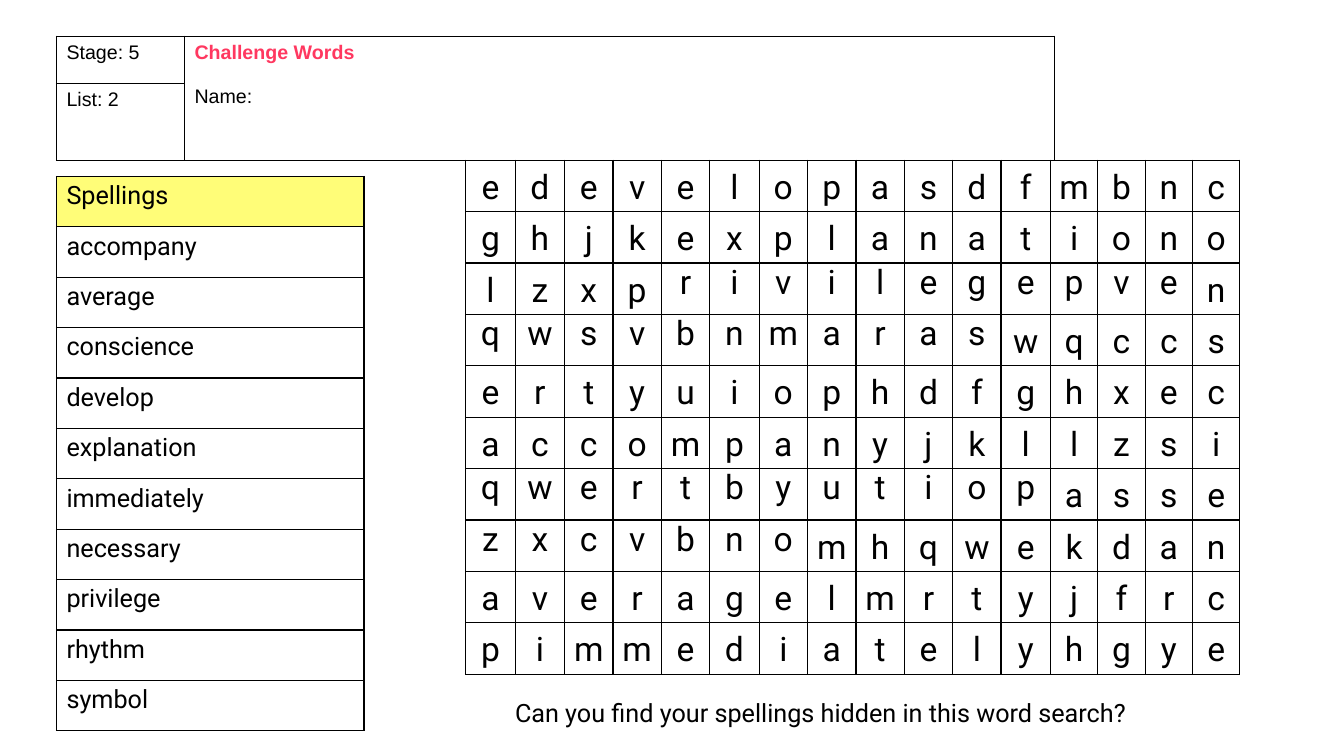
import pptx
import pptx.dml.color
import pptx.enum.text
import pptx.oxml
import pptx.oxml.ns
import pptx.util

Inches = pptx.util.Inches
Pt = pptx.util.Pt
COLORS = {"text": "000000", "border": "000000", "heading": "FF3860", "yellow": "FFFD78"}
WORDS = ["accompany", "average", "conscience", "develop", "explanation",
         "immediately", "necessary", "privilege", "rhythm", "symbol"]
LETTERS = ["edevelopasdfmbnc", "ghjkexplanationo", "lzxprivilegepven", "qwsvbnmaraswqccs",
           "ertyuiophdfghxec", "accompanyjkllzsi", "qwertbyutiopasse", "zxcvbnomhqwekdan",
           "averagelmrtyjfrc", "pimmediatelyhgye"]
GRID_COLS = [0.49] * 2 + [0.48] * 3 + [0.49] + [0.48] * 5 + [0.49] + [0.47] * 4
SINGLE_SPACED = {2: range(4, 15), 3: range(11), 6: range(12), 7: range(7)}


def rgb(name):
    return pptx.dml.color.RGBColor.from_string(COLORS[name])


def style(p, size, font, color="text", bold=False):
    p.font.size = Pt(size)
    p.font.name = font
    p.font.bold = bold
    p.font.color.rgb = rgb(color)


def add_border(cell):
    tcPr = cell._tc.get_or_add_tcPr()
    for side in ("lnL", "lnR", "lnT", "lnB"):
        tcPr.append(pptx.oxml.parse_xml(
            f'<a:{side} {pptx.oxml.ns.nsdecls("a")} w="{Pt(1)}"><a:solidFill>'
            f'<a:srgbClr val="{COLORS["border"]}"/></a:solidFill></a:{side}>'))


def add_grid(s, left, top, cols, rows):
    frame = s.shapes.add_table(len(rows), len(cols), Inches(left), Inches(top),
                               Inches(sum(cols)), Inches(sum(rows)))
    tbl = frame.table
    tbl.first_row = False
    tbl.horz_banding = False
    for column, width in zip(tbl.columns, cols):
        column.width = Inches(width)
    for row, height in zip(tbl.rows, rows):
        row.height = Inches(height)
    for cell in tbl.iter_cells():
        add_border(cell)
        cell.fill.background()
    return tbl


def add_header(s, left, top, width):
    label_width = 1.27
    tbl = add_grid(s, left, top, [label_width, width - label_width], [0.47, 0.76])
    tbl.cell(0, 1).merge(tbl.cell(1, 1))
    for row, label in enumerate(["Stage: 5", "List: 2"]):
        cell = tbl.cell(row, 0)
        cell.text = label
        style(cell.text_frame.paragraphs[0], 14, "Arial")
    tf = tbl.cell(0, 1).text_frame
    tf.text = "Challenge Words"
    style(tf.paragraphs[0], 14, "Arial", "heading", True)
    p = tf.add_paragraph()
    p.text = "Name:"
    p.space_before = Pt(16)
    style(p, 14, "Arial")


def add_spellings(s, left, top, width, height):
    entries = ["Spellings"] + WORDS
    tbl = add_grid(s, left, top, [width], [height / len(entries)] * len(entries))
    for cell, entry in zip(tbl.iter_cells(), entries):
        cell.text = entry
        style(cell.text_frame.paragraphs[0], 18, "Roboto")
    heading = tbl.cell(0, 0)
    heading.fill.solid()
    heading.fill.fore_color.rgb = rgb("yellow")


def add_word_search(s, left, top, height):
    tbl = add_grid(s, left, top, GRID_COLS, [height / len(LETTERS)] * len(LETTERS))
    for r, line in enumerate(LETTERS):
        for c, letter in enumerate(line):
            cell = tbl.cell(r, c)
            cell.margin_left = cell.margin_right = Inches(0.07)
            cell.margin_top = cell.margin_bottom = 0
            cell.text = letter
            p = cell.text_frame.paragraphs[0]
            p.alignment = pptx.enum.text.PP_ALIGN.CENTER
            if c not in SINGLE_SPACED.get(r, ()):
                p.line_spacing = 1.2
                p.space_after = Pt(10)
            style(p, 24, "Roboto")


def add_question(s, left, top, width, height):
    tf = s.shapes.add_textbox(Inches(left), Inches(top), Inches(width), Inches(height)).text_frame
    tf.word_wrap = True
    tf.auto_size = pptx.enum.text.MSO_AUTO_SIZE.SHAPE_TO_FIT_TEXT
    tf.text = "Can you find your spellings hidden in this word search?"
    style(tf.paragraphs[0], 18, "Roboto")


def main():
    prs = pptx.Presentation()
    prs.slide_width = Inches(13.33)
    prs.slide_height = Inches(7.5)
    s = prs.slides.add_slide(prs.slide_layouts[6])
    add_spellings(s, 0.56, 1.75, 3.05, 5.5)
    add_header(s, 0.56, 0.36, 9.9)
    add_word_search(s, 4.62, 1.59, 5.1)
    add_question(s, 5.01, 6.87, 8.66, 0.4)
    prs.save("out.pptx")


if __name__ == "__main__":
    main()
